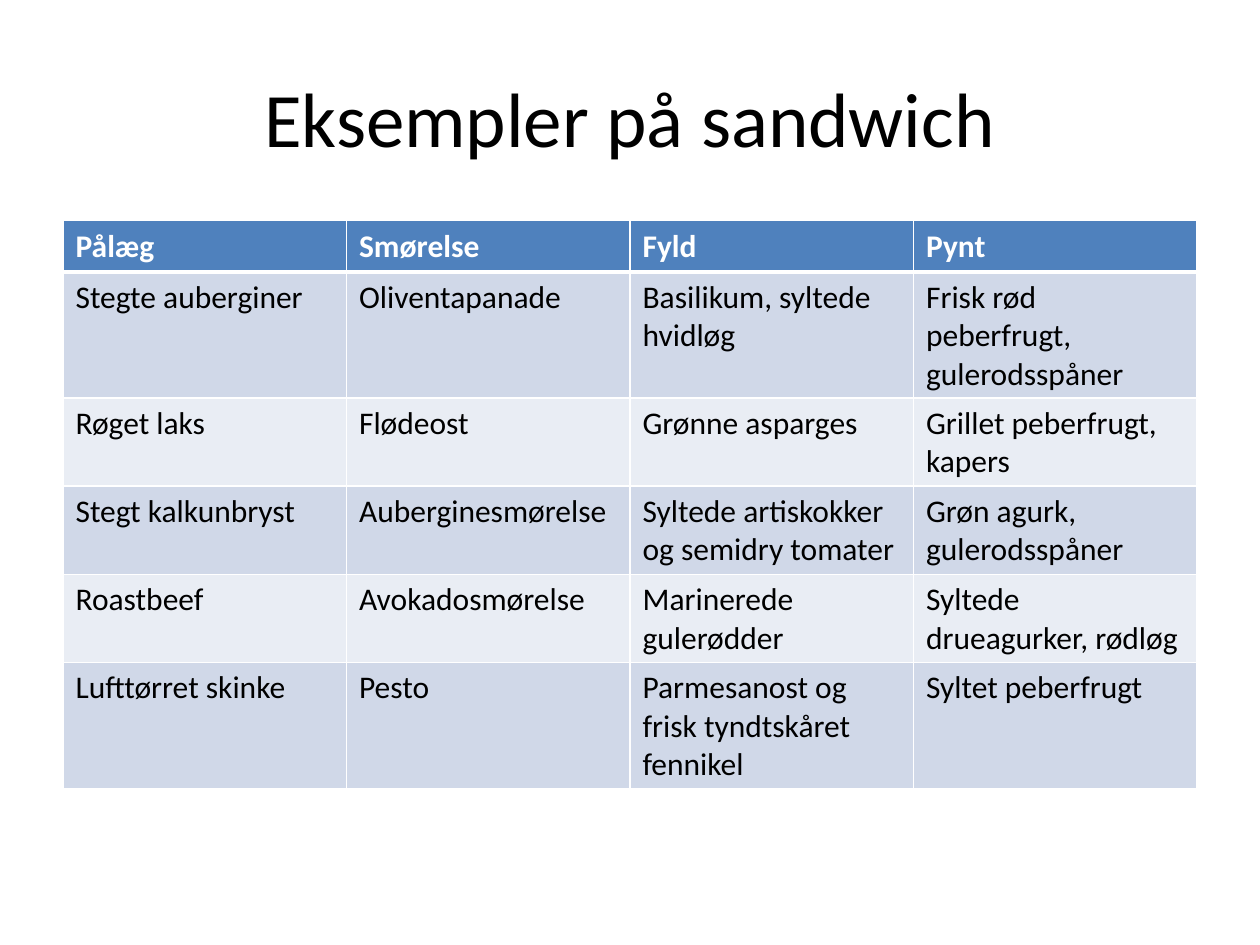
from dataclasses import dataclass

from lxml import etree
from pptx import Presentation
from pptx.dml.color import RGBColor
from pptx.enum.text import MSO_ANCHOR, PP_ALIGN
from pptx.oxml.ns import qn
from pptx.util import Cm, Pt

CENTER = PP_ALIGN.CENTER
MIDDLE = MSO_ANCHOR.MIDDLE


@dataclass(frozen=True)
class Theme:
    """Colours, font and type sizes of the slide."""
    font: str = "Calibri"
    text: str = "000000"
    header_text: str = "FFFFFF"
    header_fill: str = "4F81BD"
    bands: tuple = ("D0D8E8", "E9EDF4")
    border: str = "FFFFFF"
    thin: float = 1
    thick: float = 3
    title_size: float = 44
    table_size: float = 18


THEME = Theme()
TITLE = "Eksempler på sandwich"
SANDWICHES = [
    ("Pålæg", "Smørelse", "Fyld", "Pynt"),
    ("Stegte auberginer", "Oliventapanade", "Basilikum, syltede hvidløg",
     "Frisk rød peberfrugt, gulerodsspåner"),
    ("Røget laks", "Flødeost", "Grønne asparges", "Grillet peberfrugt, kapers"),
    ("Stegt kalkunbryst", "Auberginesmørelse",
     "Syltede artiskokker og semidry tomater", "Grøn agurk, gulerodsspåner"),
    ("Roastbeef", "Avokadosmørelse", "Marinerede gulerødder",
     "Syltede drueagurker, rødløg"),
    ("Lufttørret skinke", "Pesto", "Parmesanost og frisk tyndtskåret fennikel",
     "Syltet peberfrugt"),
]


def style_paragraph(paragraph, size, color, bold=False):
    """Set the font of a whole paragraph."""
    font = paragraph.font
    font.name = THEME.font
    font.size = Pt(size)
    font.bold = bold
    font.color.rgb = RGBColor.from_string(color)


def set_borders(cell, top, bottom):
    """Draw the four cell borders, with widths in points for top and bottom."""
    properties = cell._tc.get_or_add_tcPr()
    widths = {"a:lnL": THEME.thin, "a:lnR": THEME.thin, "a:lnT": top, "a:lnB": bottom}
    for tag, width in widths.items():
        line = etree.SubElement(properties, qn(tag), w=str(Pt(width)))
        fill = etree.SubElement(line, qn("a:solidFill"))
        etree.SubElement(fill, qn("a:srgbClr"), val=THEME.border)


def add_title(slide, left, top, width, height):
    """Place the centred title in its box."""
    frame = slide.shapes.add_textbox(left, top, width, height).text_frame
    frame.word_wrap = True
    frame.vertical_anchor = MIDDLE
    paragraph = frame.paragraphs[0]
    paragraph.text = TITLE
    paragraph.alignment = CENTER
    style_paragraph(paragraph, THEME.title_size, THEME.text)


def add_sandwich_table(slide, left, top, width, row_height):
    """Place the banded table; its rows grow to fit their text."""
    row_count, column_count = len(SANDWICHES), len(SANDWICHES[0])
    table = slide.shapes.add_table(
        row_count, column_count, left, top, width, row_height * row_count).table
    for row_index, texts in enumerate(SANDWICHES):
        is_header = row_index == 0
        fill = THEME.header_fill if is_header else THEME.bands[(row_index - 1) % 2]
        color = THEME.header_text if is_header else THEME.text
        top_width = THEME.thick if row_index == 1 else THEME.thin
        bottom_width = THEME.thick if is_header else THEME.thin
        for column_index, text in enumerate(texts):
            cell = table.cell(row_index, column_index)
            cell.text = text
            style_paragraph(cell.text_frame.paragraphs[0], THEME.table_size, color, is_header)
            set_borders(cell, top_width, bottom_width)
            cell.fill.solid()
            cell.fill.fore_color.rgb = RGBColor.from_string(fill)


def main():
    """Build the slide and save it."""
    presentation = Presentation()
    presentation.slide_width = Cm(25.4)
    presentation.slide_height = Cm(19.05)
    slide = presentation.slides.add_slide(presentation.slide_layouts[6])
    margin = Cm(1.27)
    content_width = presentation.slide_width - 2 * margin
    add_title(slide, margin, Cm(0.76), content_width, Cm(3.18))
    add_sandwich_table(slide, margin, Cm(4.45), content_width, Cm(1.03))
    presentation.save("out.pptx")


if __name__ == "__main__":
    main()
